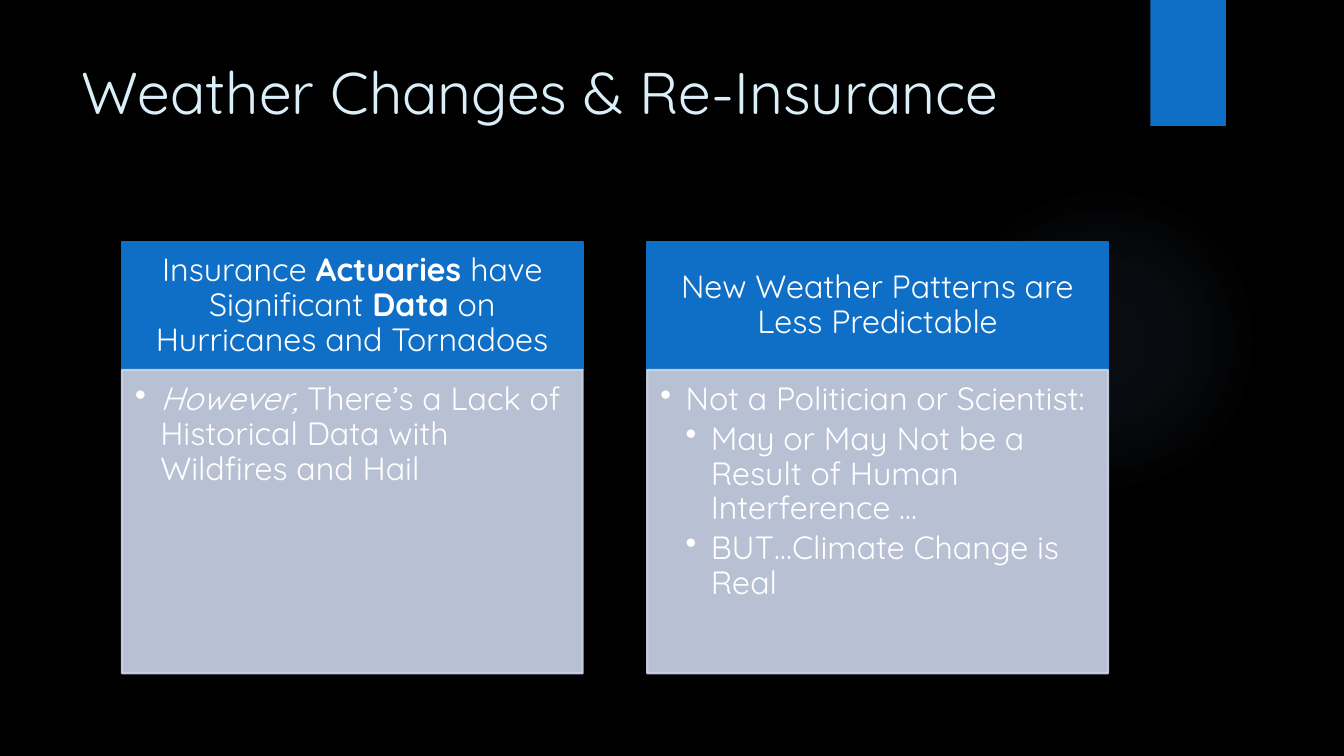
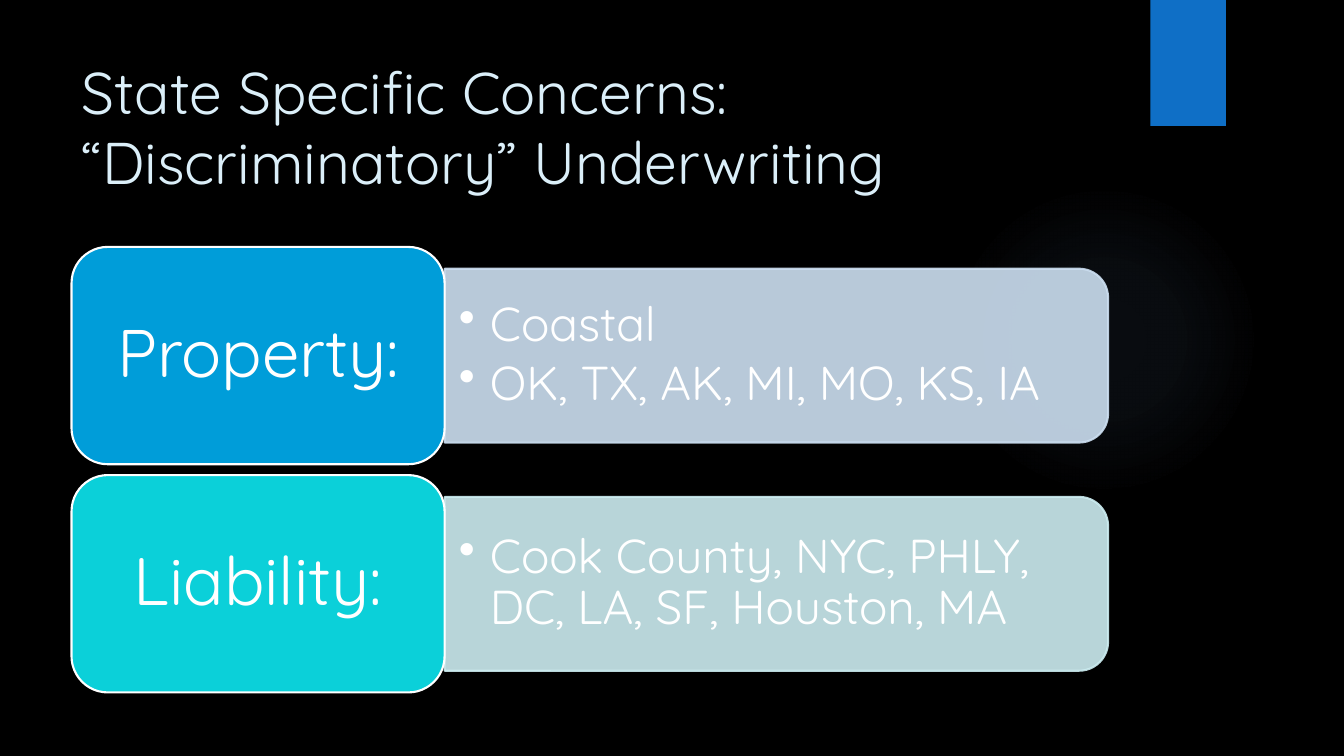
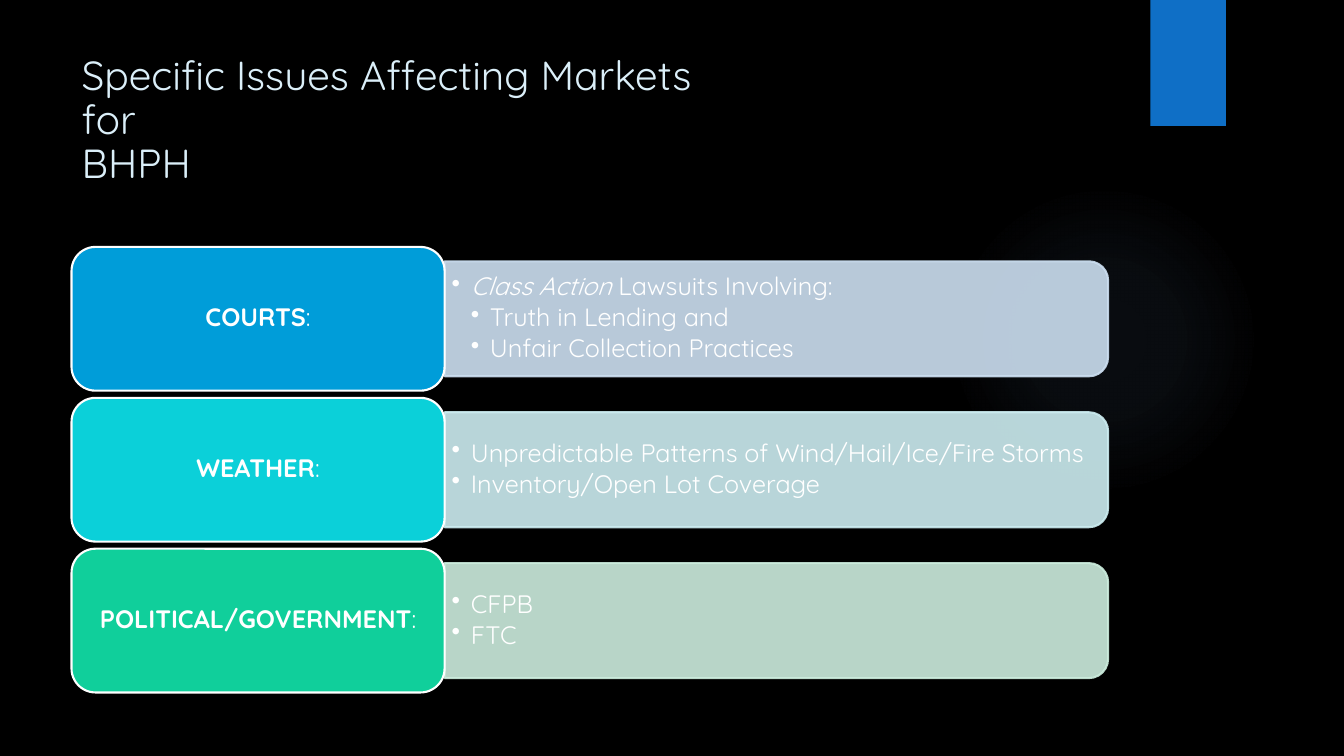
from dataclasses import dataclass
from typing import Any, NamedTuple, Optional

import lxml.etree
import pptx
import pptx.dml.color
import pptx.enum.shapes
import pptx.enum.text
import pptx.oxml.ns
import pptx.util

Inches = pptx.util.Inches
Pt = pptx.util.Pt
Shape = pptx.enum.shapes.MSO_SHAPE
Align = pptx.enum.text.PP_ALIGN
Anchor = pptx.enum.text.MSO_ANCHOR
qn = pptx.oxml.ns.qn


@dataclass(frozen=True)
class Theme:
    font: str = "Quicksand"
    back: str = "000000"
    title: str = "DBEFF9"
    text: str = "FFFFFF"
    blue: str = "0F6FC6"
    glow: str = "82B1E5"
    panel: str = "CCD5EA"
    sky: str = "009DD9"
    sky_tint: str = "CCDFF1"
    aqua: str = "0BD0D9"
    aqua_tint: str = "CCEDF1"
    green: str = "10CF9B"
    green_tint: str = "CCEDDE"
    big: float = 42
    small: float = 29
    card: float = 23
    edge: float = 1.5


THEME = Theme()


class Box(NamedTuple):
    left: float
    top: float
    width: float
    height: float


class Run(NamedTuple):
    text: str
    bold: Optional[bool] = None
    italic: Optional[bool] = None


class Para(NamedTuple):
    runs: tuple[Run, ...]
    level: int = 0


class Style(NamedTuple):
    """Type size, left/top/right/bottom insets and bullet indent (0: centred)."""
    size: float
    inset: tuple[float, float, float, float]
    indent: float = 0


class Card(NamedTuple):
    head: Para
    body: tuple[Para, ...]


class Row(NamedTuple):
    label: Para
    items: tuple[Para, ...]
    fill: str
    tint: str


def plain(text: str, level: int = 0) -> Para:
    return Para((Run(text),), level)


def bold(text: str) -> Para:
    """A bold label with a light colon."""
    return Para((Run(text, bold=True), Run(":")))


def rgb(code: str) -> pptx.dml.color.RGBColor:
    return pptx.dml.color.RGBColor.from_string(code)


def place(box: Box) -> list[int]:
    return [Inches(side) for side in box]


def set_font(para: Any, size: float, color: str) -> None:
    para.font.name = THEME.font
    para.font.size = Pt(size)
    para.font.color.rgb = rgb(color)


def draw(slide: Any, kind: Any, box: Box, fill: str,
         line: Optional[str] = None, alpha: int = 100) -> Any:
    shape = slide.shapes.add_shape(kind, *place(box))
    shape.shadow.inherit = False
    shape.fill.solid()
    shape.fill.fore_color.rgb = rgb(fill)
    if line:
        shape.line.color.rgb = rgb(line)
        shape.line.width = Pt(THEME.edge)
    else:
        shape.line.fill.background()
    if alpha < 100:
        for color in shape.element.spPr.iter(qn("a:srgbClr")):
            lxml.etree.SubElement(color, qn("a:alpha"), val=str(alpha * 1000))
    return shape


def write(shape: Any, paras: tuple[Para, ...], style: Style, anchor: Any) -> None:
    frame = shape.text_frame
    frame.word_wrap = True
    frame.vertical_anchor = anchor
    (frame.margin_left, frame.margin_top,
     frame.margin_right, frame.margin_bottom) = map(Inches, style.inset)
    for i, item in enumerate(paras):
        para = frame.add_paragraph() if i else frame.paragraphs[0]
        if style.indent:
            para.level = item.level
            props = para._p.get_or_add_pPr()
            props.set("marL", str(Inches(style.indent * (item.level + 1))))
            props.set("indent", str(-Inches(style.indent)))
            lxml.etree.SubElement(props, qn("a:buChar"), char="•")
        para.alignment = Align.LEFT if style.indent else Align.CENTER
        para.line_spacing = 0.9
        para.space_after = Pt(style.size * (0.15 if style.indent else 0.35))
        set_font(para, style.size, THEME.text)
        for part in item.runs:
            run = para.add_run()
            run.text = part.text
            run.font.bold = part.bold
            run.font.italic = part.italic


def add_glow(slide: Any) -> None:
    """Faint round light that fades out towards its rim."""
    glow = draw(slide, Shape.OVAL, Box(9.41, 1.83, 3.08, 3.08), THEME.glow)
    glow.fill.gradient()
    grad = glow.element.spPr.find(qn("a:gradFill"))
    for child in list(grad):
        grad.remove(child)
    stops = lxml.etree.SubElement(grad, qn("a:gsLst"))
    for pos, alpha in ((0, 7), (36, 6), (69, 0), (100, 0)):
        stop = lxml.etree.SubElement(stops, qn("a:gs"), pos=str(pos * 1000))
        color = lxml.etree.SubElement(stop, qn("a:srgbClr"), val=THEME.glow)
        lxml.etree.SubElement(color, qn("a:alpha"), val=str(alpha * 1000))
    shade = lxml.etree.SubElement(grad, qn("a:path"))
    shade.set("path", "circle")
    lxml.etree.SubElement(shade, qn("a:fillToRect"),
                          l="50000", t="50000", r="50000", b="50000")


def add_slide(deck: Any, text: str, size: float = THEME.big,
              spacing: float = 1.0) -> Any:
    slide = deck.slides.add_slide(deck.slide_layouts[5])
    add_glow(slide)
    draw(slide, Shape.RECTANGLE, Box(11.41, 0, 0.75, 1.25), THEME.blue)
    title = slide.shapes.title
    title.left, title.top, title.width, title.height = place(
        Box(0.71, 0.5, 10.29, 1.53))
    frame = title.text_frame
    frame.text = text
    frame.word_wrap = True
    frame.auto_size = pptx.enum.text.MSO_AUTO_SIZE.NONE
    frame.vertical_anchor = Anchor.TOP
    para = frame.paragraphs[0]
    para.alignment = Align.LEFT
    para.line_spacing = spacing
    set_font(para, size, THEME.title)
    return slide


def add_cards(slide: Any, cards: tuple[Card, ...]) -> None:
    head = Style(THEME.card, (0.18, 0.1, 0.18, 0.1))
    body = Style(THEME.card, (0.13, 0.13, 0.18, 0.2), 0.25)
    for i, card in enumerate(cards):
        left = 1.21 + 5.21 * i
        top = draw(slide, Shape.RECTANGLE, Box(left, 2.4, 4.57, 1.27),
                   THEME.blue, THEME.blue)
        write(top, (card.head,), head, Anchor.MIDDLE)
        panel = draw(slide, Shape.RECTANGLE, Box(left, 3.67, 4.57, 3.01),
                     THEME.panel, THEME.panel, 90)
        write(panel, card.body, body, Anchor.TOP)


def add_rows(slide: Any, rows: tuple[Row, ...], label: Style, item: Style) -> None:
    """Stack labels with a bar beside each, filling a fixed height."""
    left, top, total, wide, span = 0.71, 2.45, 4.42, 3.7, 6.58
    gap = 0.05
    high = total / (len(rows) + gap * (len(rows) - 1))
    thick = 0.8 * high
    curve = thick / 6 * (1 - 0.5 ** 0.5)
    start = left + wide
    for i, row in enumerate(rows):
        y = top + i * high * (1 + gap)
        mid = y + high / 2
        bar = draw(slide, Shape.ROUND_2_SAME_RECTANGLE,
                   Box(start + (span - thick) / 2, mid - span / 2, thick, span),
                   row.tint, row.tint, 90)
        bar.rotation = 90
        note = slide.shapes.add_textbox(*place(
            Box(start, mid - thick / 2 + curve, span - curve, thick - 2 * curve)))
        write(note, row.items, item, Anchor.MIDDLE)
        tab = draw(slide, Shape.ROUNDED_RECTANGLE, Box(left, y, wide, high),
                   row.fill, THEME.text)
        write(tab, (row.label,), label, Anchor.MIDDLE)


CARDS = (
    Card(Para((Run("Insurance"), Run(" Actuaries ", bold=True),
               Run("have Significant "), Run("Data", bold=True),
               Run(" on Hurricanes and Tornadoes"))),
         (Para((Run("However, ", italic=True),
                Run("There’s a Lack of Historical Data with Wildfires and Hail"))),)),
    Card(plain("New Weather Patterns are Less Predictable"),
         (plain("Not a Politician or Scientist:"),
          plain("May or May Not be a Result of Human Interference …", 1),
          plain("BUT…Climate Change is Real", 1))),
)

STATES = (
    Row(plain("Property:"),
        (plain("Coastal"), plain("OK, TX, AK, MI, MO, KS, IA")),
        THEME.sky, THEME.sky_tint),
    Row(plain("Liability:"),
        (plain("Cook County, NYC, PHLY, DC, LA, SF, Houston, MA"),),
        THEME.aqua, THEME.aqua_tint),
)

ISSUES = (
    Row(bold("COURTS"),
        (Para((Run("Class Action ", italic=True), Run("Lawsuits Involving:"))),
         plain("Truth in Lending and", 1),
         plain("Unfair Collection Practices", 1)),
        THEME.sky, THEME.sky_tint),
    Row(bold("WEATHER"),
        (plain("Unpredictable Patterns of Wind/Hail/Ice/Fire Storms"),
         plain("Inventory/Open Lot Coverage")),
        THEME.aqua, THEME.aqua_tint),
    Row(bold("POLITICAL/GOVERNMENT"),
        (plain("CFPB"), plain("FTC")),
        THEME.green, THEME.green_tint),
)


def main() -> None:
    deck = pptx.Presentation()
    deck.slide_width, deck.slide_height = Inches(13.33), Inches(7.5)
    back = deck.slide_master.background.fill
    back.solid()
    back.fore_color.rgb = rgb(THEME.back)

    add_cards(add_slide(deck, "Weather Changes & Re-Insurance"), CARDS)

    states = add_slide(deck, "State Specific Concerns: “Discriminatory” Underwriting")
    add_rows(states, STATES, Style(48, (0.2, 0.1, 0.2, 0.1)),
             Style(34, (0.14, 0.07, 0.14, 0.07), 0.31))

    issues = add_slide(deck, "Specific Issues Affecting Markets\vfor\vBHPH",
                       THEME.small, 0.9)
    tight = (0.07, 0.04, 0.07, 0.04)
    add_rows(issues, ISSUES, Style(18, tight), Style(18, tight, 0.19))

    deck.save("out.pptx")


if __name__ == "__main__":
    main()
